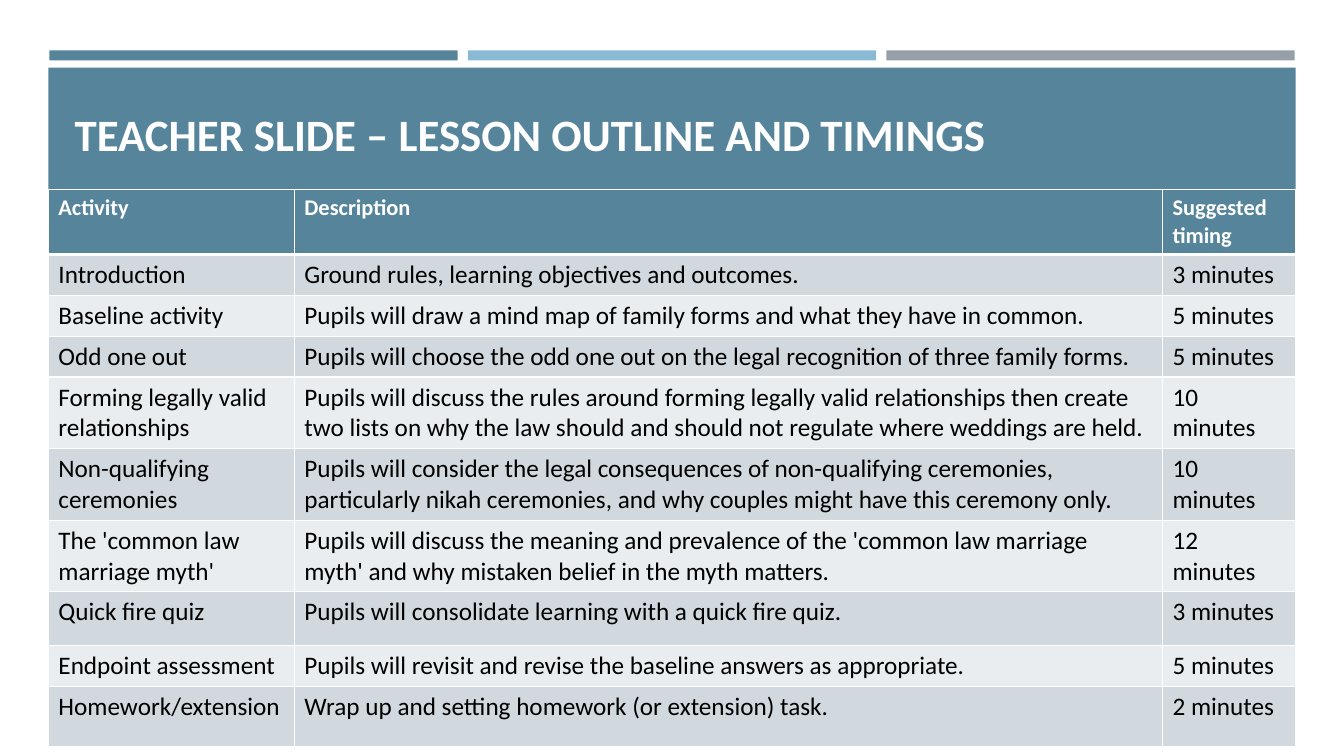
from dataclasses import dataclass

from lxml.etree import SubElement
from pptx import Presentation
from pptx.dml.color import RGBColor
from pptx.enum.shapes import MSO_SHAPE
from pptx.enum.text import MSO_ANCHOR, MSO_AUTO_SIZE, PP_ALIGN
from pptx.oxml.ns import qn
from pptx.util import Inches, Pt


@dataclass(frozen=True)
class Theme:
    """Colours, font and type sizes of the slide."""
    font: str = "Calibri"
    teal: str = "56859B"
    sky: str = "89B9D3"
    grey: str = "969FA7"
    dark: str = "D1D9DE"
    pale: str = "E9EDEF"
    white: str = "FFFFFF"
    black: str = "000000"
    title: int = 32
    head: int = 16
    body: int = 18


@dataclass(frozen=True)
class Box:
    """A region in inches."""
    left: float
    top: float
    width: float
    height: float

    def place(self):
        """Return the region as lengths."""
        return [Inches(n) for n in (self.left, self.top, self.width, self.height)]


THEME = Theme()
TITLE = "TEACHER SLIDE – LESSON OUTLINE AND TIMINGS"
COLS = [2.44, 8.61, 1.32]
HEIGHTS = [0.62, 0.39, 0.39, 0.39, 0.68, 0.68, 0.71, 0.53, 0.39, 0.6]
ROWS = [
    ("Activity", "Description", "Suggested timing"),
    ("Introduction", "Ground rules, learning objectives and outcomes.", "3 minutes"),
    ("Baseline activity",
     "Pupils will draw a mind map of family forms and what they have in common.",
     "5 minutes"),
    ("Odd one out",
     "Pupils will choose the odd one out on the legal recognition of three family forms.",
     "5 minutes"),
    ("Forming legally valid relationships",
     "Pupils will discuss the rules around forming legally valid relationships then "
     "create two lists on why the law should and should not regulate where weddings "
     "are held.",
     "10 minutes"),
    ("Non-qualifying ceremonies",
     "Pupils will consider the legal consequences of non-qualifying ceremonies, "
     "particularly nikah ceremonies, and why couples might have this ceremony only.",
     "10 minutes"),
    ("The 'common law marriage myth'",
     "Pupils will discuss the meaning and prevalence of the 'common law marriage "
     "myth' and why mistaken belief in the myth matters.",
     "12 minutes"),
    ("Quick fire quiz", "Pupils will consolidate learning with a quick fire quiz.",
     "3 minutes"),
    ("Endpoint assessment",
     "Pupils will revisit and revise the baseline answers as appropriate.",
     "5 minutes"),
    ("Homework/extension", "Wrap up and setting homework (or extension) task.",
     "2 minutes"),
]


def add_run(para, text, size, color, bold):
    """Add one styled run to a paragraph."""
    run = para.add_run()
    run.text = text
    font = run.font
    font.name, font.size, font.bold = THEME.font, Pt(size), bold
    font.color.rgb = RGBColor.from_string(color)


def add_rect(slide, box, color):
    """Draw a plain filled rectangle."""
    rect = slide.shapes.add_shape(MSO_SHAPE.RECTANGLE, *box.place())
    rect.shadow.inherit = False
    rect.fill.solid()
    rect.fill.fore_color.rgb = RGBColor.from_string(color)
    rect.line.fill.background()


def add_bars(slide, box, gap=0.1):
    """Split the box into three coloured bars."""
    colors = [THEME.teal, THEME.sky, THEME.grey]
    width = (box.width - gap * (len(colors) - 1)) / len(colors)
    for i, color in enumerate(colors):
        left = box.left + i * (width + gap)
        add_rect(slide, Box(left, box.top, width, box.height), color)


def add_title(slide, box):
    """Draw the banner and set the title on it."""
    add_rect(slide, box, THEME.teal)
    title = slide.shapes.title
    title.element.getparent().append(title.element)
    inner = Box(box.left + 0.16, box.top + 0.1, box.width - 0.31, box.height - 0.19)
    title.left, title.top, title.width, title.height = inner.place()
    frame = title.text_frame
    frame.word_wrap = True
    frame.auto_size = MSO_AUTO_SIZE.NONE
    frame.vertical_anchor = MSO_ANCHOR.MIDDLE
    para = frame.paragraphs[0]
    para.alignment = PP_ALIGN.LEFT
    add_run(para, TITLE, THEME.title, THEME.white, True)


def add_edges(cell, top, base):
    """Give a cell white borders, with widths in points."""
    props = cell._tc.get_or_add_tcPr()
    for side, width in (("L", 1), ("R", 1), ("T", top), ("B", base)):
        line = SubElement(props, qn(f"a:ln{side}"), w=str(Pt(width)))
        fill = SubElement(line, qn("a:solidFill"))
        SubElement(fill, qn("a:srgbClr"), val=THEME.white)


def add_plan(slide, box):
    """Build the lesson table inside the box."""
    table = slide.shapes.add_table(len(ROWS), len(COLS), *box.place()).table
    for col, width in zip(table.columns, COLS):
        col.width = Inches(width)
    for r, (row, height) in enumerate(zip(ROWS, HEIGHTS)):
        table.rows[r].height = Inches(height)
        head = r == 0
        fill = THEME.teal if head else THEME.dark if r % 2 else THEME.pale
        size = THEME.head if head else THEME.body
        color = THEME.white if head else THEME.black
        for c, text in enumerate(row):
            cell = table.cell(r, c)
            add_edges(cell, 3 if r == 1 else 1, 3 if head else 1)
            cell.fill.solid()
            cell.fill.fore_color.rgb = RGBColor.from_string(fill)
            add_run(cell.text_frame.paragraphs[0], text, size, color, head)


def main():
    """Build and save the slide."""
    deck = Presentation()
    deck.slide_width, deck.slide_height = Inches(13.33), Inches(7.5)
    slide = deck.slides.add_slide(deck.slide_layouts[5])
    add_bars(slide, Box(0.49, 0.5, 12.35, 0.1))
    add_title(slide, Box(0.48, 0.67, 12.37, 1.3))
    add_plan(slide, Box(0.48, 1.88, sum(COLS), sum(HEIGHTS)))
    deck.save("out.pptx")


if __name__ == "__main__":
    main()
